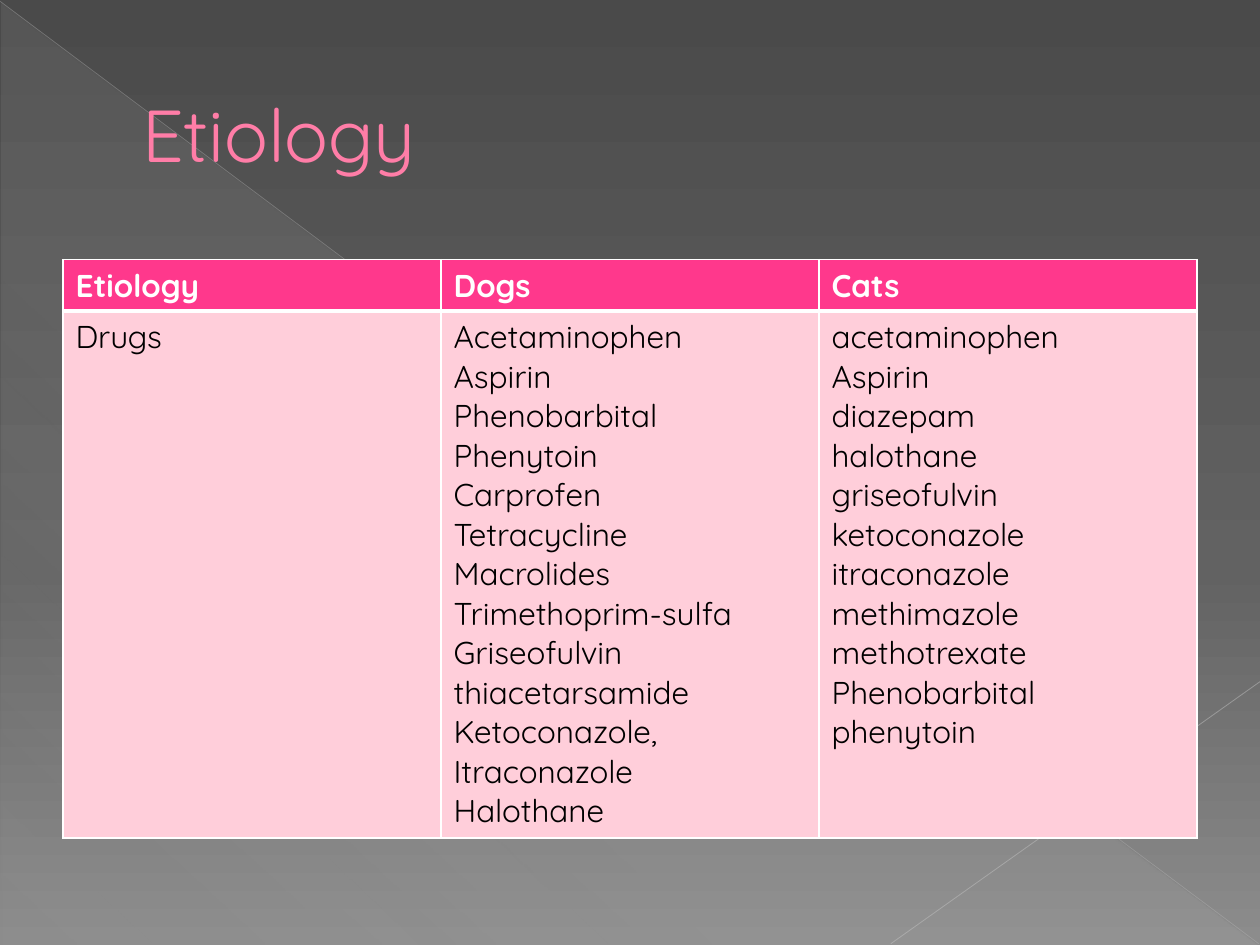
from lxml.etree import SubElement
from pptx import Presentation
from pptx.dml.color import RGBColor
from pptx.enum.shapes import MSO_CONNECTOR, MSO_SHAPE
from pptx.enum.text import MSO_ANCHOR
from pptx.oxml.ns import qn
from pptx.util import Inches, Pt

COLORS = {
    "triangle": "D2D2D2", "diagonal": "BFBFBF", "corner line": "C6C6C6",
    "title": "FF7DA7", "title outline": "B12761",
    "header": "FF388C", "body": "FFCEDA", "white": "FFFFFF", "black": "000000",
    "background top": "4A4A4A", "background middle": "626262", "background bottom": "8C8C8C",
}
FONT = "Quicksand"


def add_color(parent, color, alpha=100):
    """Append a color, with opacity in percent, to an XML element."""
    value = SubElement(parent, qn("a:srgbClr"), val=COLORS[color])
    if alpha < 100:
        SubElement(value, qn("a:alpha"), val=str(alpha * 1000))


def make_gradient(properties, stops, angle):
    """Swap the solid fill for a gradient of (position, color, opacity) stops."""
    solid = properties.find(qn("a:solidFill"))
    gradient = properties.makeelement(qn("a:gradFill"), {"rotWithShape": "1"})
    stop_list = SubElement(gradient, qn("a:gsLst"))
    for position, color, alpha in stops:
        add_color(SubElement(stop_list, qn("a:gs"), pos=str(position * 1000)), color, alpha)
    SubElement(gradient, qn("a:lin"), ang=str(angle * 60000), scaled="0")
    properties.replace(solid, gradient)


presentation = Presentation()
presentation.slide_width = Inches(10)
presentation.slide_height = Inches(7.5)
slide = presentation.slides.add_slide(presentation.slide_layouts[6])

# Background
slide.background.fill.solid()
slide.background.fill.fore_color.rgb = RGBColor.from_string(COLORS["black"])
make_gradient(slide.element.find(".//" + qn("p:bgPr")),
              [(0, "background top", 100), (60, "background middle", 100),
               (100, "background bottom", 100)], 90)

triangle = slide.shapes.add_shape(MSO_SHAPE.RIGHT_TRIANGLE, Inches(0.01), Inches(0.02),
                                  Inches(9.98), Inches(7.48))
triangle.shadow.inherit = False
triangle.line.fill.background()
triangle.fill.solid()
triangle.fill.fore_color.rgb = RGBColor.from_string(COLORS["triangle"])
make_gradient(triangle.element.spPr,
              [(0, "triangle", 10), (70, "triangle", 8), (100, "triangle", 1)], 133)

for start_x, start_y, end_x, end_y, color, width, alpha in (
    (0, 0.01, 9.99, 7.49, "diagonal", 0.39, 35),
    (10, 5.41, 7.07, 7.49, "corner line", 0.47, 45),
):
    line = slide.shapes.add_connector(MSO_CONNECTOR.STRAIGHT, Inches(start_x), Inches(start_y),
                                      Inches(end_x), Inches(end_y))
    line.line.width = Pt(width)
    outline = line.element.spPr.find(qn("a:ln"))
    add_color(SubElement(outline, qn("a:solidFill")), color, alpha)
    SubElement(line.element.spPr, qn("a:effectLst"))

# Title
title = slide.shapes.add_textbox(Inches(0.5), Inches(0.29), Inches(9), Inches(1.53))
title.text_frame.word_wrap = True
title.text_frame.vertical_anchor = MSO_ANCHOR.MIDDLE
paragraph = title.text_frame.paragraphs[0]
paragraph._p.get_or_add_pPr().set("marL", str(Inches(0.53)))
run = paragraph.add_run()
run.text = "Etiology"
outline = SubElement(run._r.get_or_add_rPr(), qn("a:ln"), w=str(Pt(0.5)))
add_color(SubElement(outline, qn("a:solidFill")), "title outline")
run.font.name = FONT
run.font.size = Pt(42)
run.font.color.rgb = RGBColor.from_string(COLORS["title"])

# Table: one list of paragraphs for each cell
rows = [
    [["Etiology"], ["Dogs"], ["Cats"]],
    [
        ["Drugs"],
        ["Acetaminophen", "Aspirin", "Phenobarbital", "Phenytoin", "Carprofen",
         "Tetracycline", "Macrolides", "Trimethoprim-sulfa", "Griseofulvin",
         "thiacetarsamide", "Ketoconazole, Itraconazole", "Halothane"],
        ["acetaminophen", "Aspirin", "diazepam", "halothane", "griseofulvin",
         "ketoconazole", "itraconazole", "methimazole", "methotrexate",
         "Phenobarbital", "phenytoin"],
    ],
]
row_heights = [0.41, 4.18]
table = slide.shapes.add_table(2, 3, Inches(0.5), Inches(2.06), Inches(9),
                               Inches(sum(row_heights))).table
for column in table.columns:
    column.width = Inches(3)
for table_row, height in zip(table.rows, row_heights):
    table_row.height = Inches(height)

for row_index, row in enumerate(rows):
    is_header = row_index == 0
    thick_side = "lnB" if is_header else "lnT"
    for column_index, names in enumerate(row):
        cell = table.cell(row_index, column_index)
        for side in ("lnL", "lnR", "lnT", "lnB"):
            border = SubElement(cell._tc.get_or_add_tcPr(), qn("a:" + side),
                                w=str(Pt(3 if side == thick_side else 1)))
            add_color(SubElement(border, qn("a:solidFill")), "white")
        cell.fill.solid()
        cell.fill.fore_color.rgb = RGBColor.from_string(COLORS["header" if is_header else "body"])
        for name_index, name in enumerate(names):
            frame = cell.text_frame
            paragraph = frame.add_paragraph() if name_index else frame.paragraphs[0]
            run = paragraph.add_run()
            run.text = name
            run.font.name = FONT
            run.font.size = Pt(18)
            run.font.bold = is_header
            run.font.color.rgb = RGBColor.from_string(COLORS["white" if is_header else "black"])

presentation.save("out.pptx")
